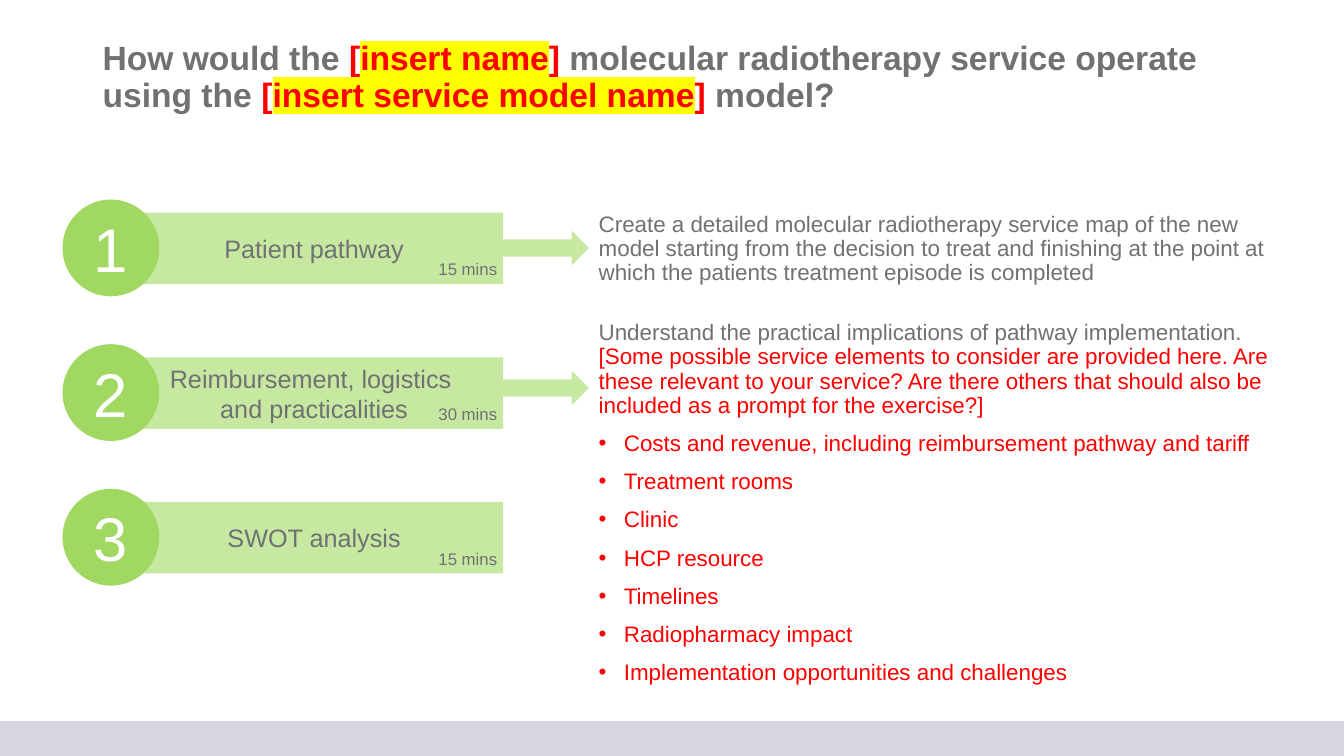
from dataclasses import dataclass, field
from typing import Optional

from lxml import etree
from pptx import Presentation
from pptx import util as u
from pptx.dml.color import RGBColor
from pptx.enum import shapes, text
from pptx.oxml import ns

GREY = RGBColor(0x70, 0x71, 0x73)
RED = RGBColor(0xFF, 0x00, 0x00)
WHITE = RGBColor(0xFF, 0xFF, 0xFF)
LIME = RGBColor(0xC7, 0xE8, 0xA1)
GREEN = RGBColor(0xA1, 0xD8, 0x62)
LILAC = RGBColor(0xD8, 0xD7, 0xE1)
YELLOW = RGBColor(0xFF, 0xFF, 0x00)

KIND = shapes.MSO_SHAPE
MID = text.MSO_ANCHOR.MIDDLE
TOP = text.MSO_ANCHOR.TOP
CENTER = text.PP_ALIGN.CENTER
BODY = {"line_spacing": 0.9, "space_before": u.Pt(10)}
TIGHT = {"line_spacing": 0.9}
MIDDLE = {"alignment": CENTER}


@dataclass
class Piece:
    words: str
    color: RGBColor = GREY
    mark: Optional[RGBColor] = None


@dataclass
class Para:
    pieces: list[Piece]
    form: dict = field(default_factory=dict)
    bullet: bool = False


@dataclass
class Step:
    label: str
    time: str


@dataclass
class Note:
    top: float
    height: float
    arrow: float
    paras: list[Para]


STEPS = [
    Step("Patient pathway", "15 mins"),
    Step("Reimbursement, logistics \nand practicalities", "30 mins"),
    Step("SWOT analysis", "15 mins"),
]
ITEMS = [
    "Costs and revenue, including reimbursement pathway and tariff",
    "Treatment rooms",
    "Clinic",
    "HCP resource",
    "Timelines",
    "Radiopharmacy impact",
    "Implementation opportunities and challenges",
]
TITLE = [
    Piece("How would the "),
    Piece("[", RED),
    Piece("insert name", RED, YELLOW),
    Piece("] ", RED),
    Piece("molecular radiotherapy service operate using the "),
    Piece("[", RED),
    Piece("insert service model name", RED, YELLOW),
    Piece("]", RED),
    Piece(" model?"),
]
NOTES = [
    Note(1.95, 1.05, 2.29, [Para([Piece(
        "Create a detailed molecular radiotherapy service map of the new model "
        "starting from the decision to treat and finishing at the point at "
        "which the patients treatment episode is completed")], BODY)]),
    Note(3.33, 3.33, 3.68, [
        Para([
            Piece("Understand the practical implications of pathway implementation.\n"),
            Piece("[Some possible service elements to consider are provided here. "
                  "Are these relevant to your service? Are there others that should "
                  "also be included as a prompt for the exercise?]", RED),
        ], BODY),
        *[Para([Piece(item, RED)], BODY, True) for item in ITEMS],
    ]),
]
PITCH = 1.435


def apply(target, form: dict) -> None:
    for name, value in form.items():
        setattr(target, name, value)


def add_piece(para, piece: Piece, font: dict) -> None:
    for i, line in enumerate(piece.words.split("\n")):
        if i:
            para.add_line_break()
        if not line:
            continue
        run = para.add_run()
        run.text = line
        apply(run.font, {"name": "Arial", **font})
        run.font.color.rgb = piece.color
        if piece.mark is not None:
            glow = etree.Element(ns.qn("a:highlight"))
            etree.SubElement(glow, ns.qn("a:srgbClr"), val=str(piece.mark))
            run.font._element.find(ns.qn("a:solidFill")).addnext(glow)


def add_bullet(para) -> None:
    props = para._p.get_or_add_pPr()
    props.set("marL", str(u.Inches(0.25)))
    props.set("indent", str(u.Inches(-0.25)))
    etree.SubElement(props, ns.qn("a:buFont"), typeface="Arial")
    etree.SubElement(props, ns.qn("a:buChar"), char="•")


def write(shape, paras: list[Para], font: dict, anchor=MID, wrap: bool = True) -> None:
    frame = shape.text_frame
    apply(frame, {"word_wrap": wrap, "vertical_anchor": anchor})
    for i, item in enumerate(paras):
        para = frame.add_paragraph() if i else frame.paragraphs[0]
        apply(para, item.form)
        if item.bullet:
            add_bullet(para)
        for piece in item.pieces:
            add_piece(para, piece, font)


def add_block(slide, kind, box: tuple, color: RGBColor):
    shape = slide.shapes.add_shape(kind, *map(u.Inches, box))
    shape.shadow.inherit = False
    shape.fill.solid()
    shape.fill.fore_color.rgb = color
    shape.line.fill.background()
    return shape


def add_text(slide, box: tuple, paras: list[Para], font: dict, anchor=MID,
             wrap: bool = True) -> None:
    shape = slide.shapes.add_textbox(*map(u.Inches, box))
    write(shape, paras, font, anchor, wrap)


def add_step(slide, index: int, step: Step) -> None:
    drop = index * PITCH
    bar = add_block(slide, KIND.RECTANGLE, (1.24, 2.11 + drop, 3.75, 0.71), LIME)
    write(bar, [Para([Piece(step.label)], MIDDLE)], {"size": u.Pt(18)})
    disc = add_block(slide, KIND.OVAL, (0.62, 1.98 + drop, 0.96, 0.96), GREEN)
    write(disc, [Para([Piece(str(index + 1), WHITE)], MIDDLE)], {"size": u.Pt(44)})
    add_text(slide, (4.25, 2.52 + drop, 0.79, 0.3), [Para([Piece(step.time)])],
             {"size": u.Pt(12)}, TOP, False)


def add_note(slide, note: Note) -> None:
    add_text(slide, (5.84, note.top, 7, note.height), note.paras, {"size": u.Pt(16)})
    add_block(slide, KIND.RIGHT_ARROW, (4.99, note.arrow, 0.85, 0.34), LIME)


def main() -> None:
    deck = Presentation()
    apply(deck, {"slide_width": u.Inches(13.33), "slide_height": u.Inches(7.5)})
    slide = deck.slides.add_slide(deck.slide_layouts[6])
    strip = add_block(slide, KIND.RECTANGLE, (0, 7.16, 13.33, 0.34), LILAC)
    strip.line.color.rgb = LILAC
    strip.line.width = u.Pt(1)
    add_text(slide, (0.92, 0.4, 11.5, 0.75), [Para(TITLE, TIGHT)],
             {"size": u.Pt(24), "bold": True})
    for index, step in enumerate(STEPS):
        add_step(slide, index, step)
    for note in NOTES:
        add_note(slide, note)
    deck.save("out.pptx")


if __name__ == "__main__":
    main()
